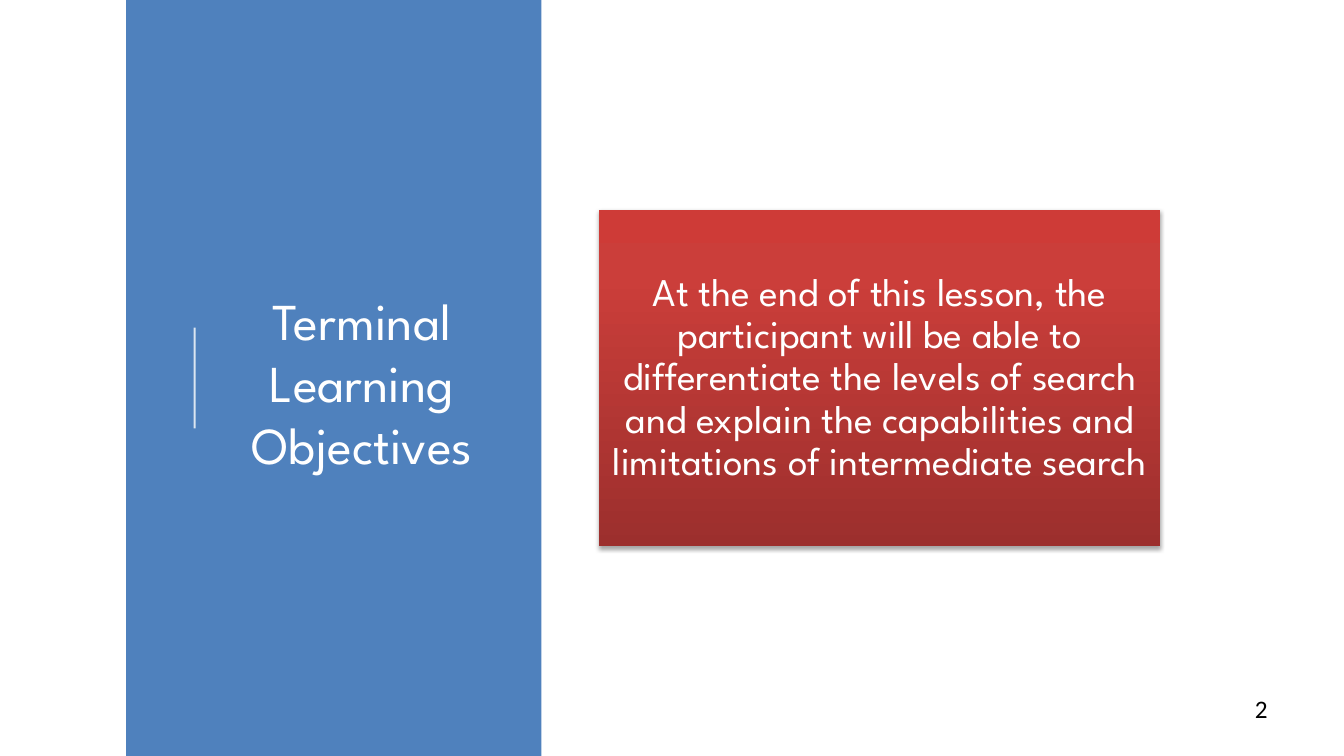
from dataclasses import dataclass
from pptx import Presentation
from pptx.dml.color import RGBColor
from pptx.enum.shapes import MSO_CONNECTOR, MSO_SHAPE
from pptx.enum.text import MSO_ANCHOR, PP_ALIGN
from pptx.oxml import parse_xml
from pptx.oxml.ns import nsdecls
from pptx.util import Inches, Pt

RECT = MSO_SHAPE.RECTANGLE
LINE = MSO_CONNECTOR.STRAIGHT
TOP, MIDDLE = MSO_ANCHOR.TOP, MSO_ANCHOR.MIDDLE
CENTER, RIGHT = PP_ALIGN.CENTER, PP_ALIGN.RIGHT


@dataclass
class Theme:
    blue: str = "4F81BD"
    white: str = "FFFFFF"
    black: str = "000000"
    reds: tuple = ((0, "9C2F2D"), (80, "CB3E3A"), (100, "CE3B37"))
    head: str = "League Spartan"
    plain: str = "Calibri"
    title: int = 37
    body: int = 28
    page: int = 18


theme = Theme()


def write(shape, text, size, font, color, align, anchor):
    frame = shape.text_frame
    frame.word_wrap = True
    frame.vertical_anchor = anchor
    para = frame.paragraphs[0]
    para.alignment = align
    run = para.add_run()
    run.text = text
    run.font.size = Pt(size)
    run.font.name = font
    run.font.color.rgb = RGBColor.from_string(color)
    return frame


deck = Presentation()
deck.slide_width = Inches(13.33)
deck.slide_height = Inches(7.5)
slide = deck.slides.add_slide(deck.slide_layouts[6])
shapes = slide.shapes

panel = shapes.add_shape(RECT, Inches(1.25), 0, Inches(4.12), Inches(7.5))
panel.shadow.inherit = False
panel.fill.solid()
panel.fill.fore_color.rgb = RGBColor.from_string(theme.blue)
panel.line.fill.background()

rule = shapes.add_connector(LINE, Inches(1.93), Inches(4.25), Inches(1.93), Inches(3.25))
rule.line.width = Pt(1.5)
rule.line.color.rgb = RGBColor.from_string(theme.white)
tint = rule.line.fill.fore_color
paint = rule._element.spPr.find(".//{*}srgbClr")
paint.append(parse_xml(f'<a:alpha {nsdecls("a")} val="80000"/>'))
rule._element.spPr.append(parse_xml(f'<a:effectLst {nsdecls("a")}/>'))

title = shapes.add_textbox(Inches(2.09), Inches(0.78), Inches(3), Inches(6.02))
write(title, "Terminal Learning Objectives", theme.title, theme.head,
      theme.white, CENTER, MIDDLE)

card = shapes.add_shape(RECT, Inches(5.94), Inches(2.08), Inches(5.57), Inches(3.34))
card.line.fill.background()
stops = "".join(
    f'<a:gs pos="{pos * 1000}"><a:srgbClr val="{color}"/></a:gs>'
    for pos, color in theme.reds
)
blend = parse_xml(
    f'<a:gradFill {nsdecls("a")} rotWithShape="1"><a:gsLst>{stops}</a:gsLst>'
    '<a:lin ang="16200000" scaled="0"/></a:gradFill>'
)
card._element.spPr.find("{*}prstGeom").addnext(blend)
shade = parse_xml(
    f'<a:effectLst {nsdecls("a")}><a:outerShdw blurRad="{Pt(3.1)}" dist="{Pt(1.8)}" '
    f'dir="5400000" rotWithShape="0"><a:srgbClr val="{theme.black}">'
    '<a:alpha val="35000"/></a:srgbClr></a:outerShdw></a:effectLst>'
)
card._element.spPr.append(shade)
goal = write(
    card,
    "At the end of this lesson, the participant will be able to differentiate "
    "the levels of search and explain the capabilities and limitations of "
    "intermediate search",
    theme.body, theme.head, theme.white, CENTER, MIDDLE,
)
goal.margin_left = goal.margin_right = Inches(0.12)
goal.margin_top = goal.margin_bottom = Inches(0.12)
goal.paragraphs[0].line_spacing = 0.9

page = shapes.add_textbox(Inches(9.56), Inches(6.83), Inches(3.11), Inches(0.4))
write(page, "2", theme.page, theme.plain, theme.black, RIGHT, TOP)

deck.save("out.pptx")
